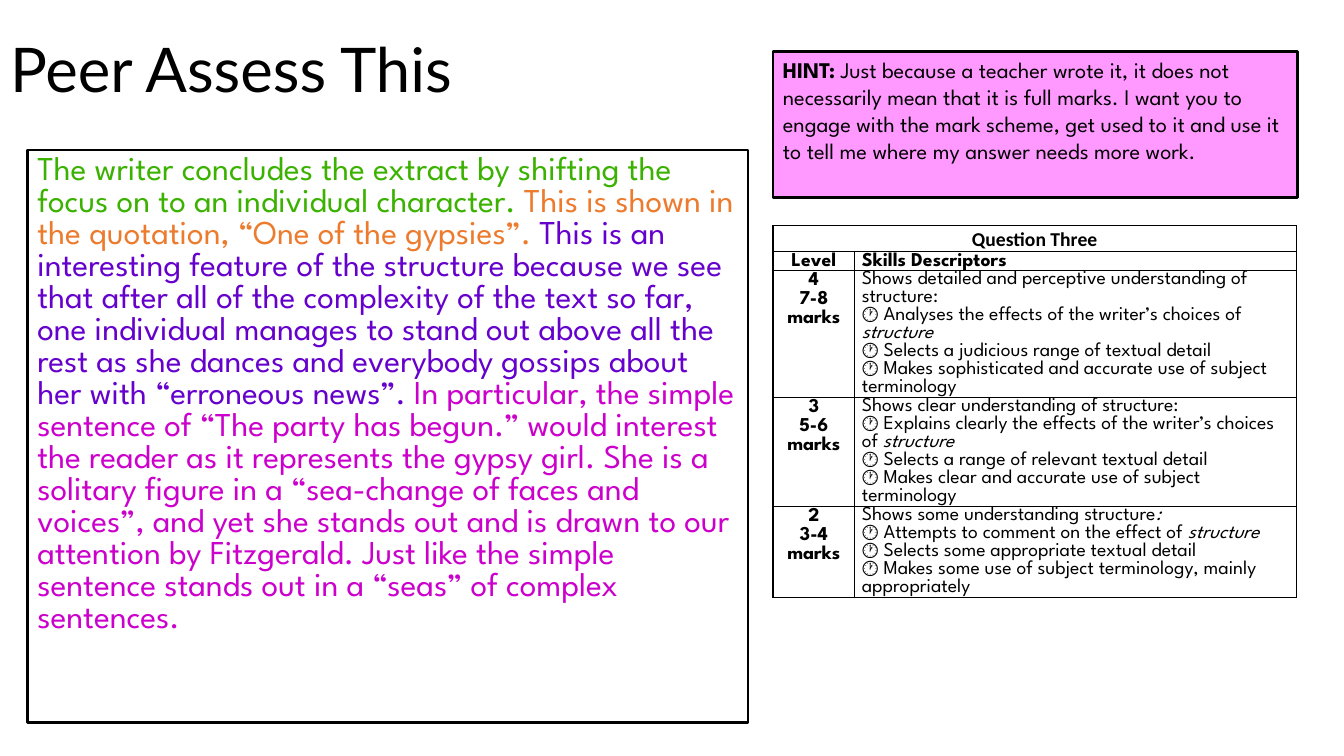
from lxml import etree
from pptx import Presentation
from pptx.dml.color import RGBColor
from pptx.enum.shapes import MSO_SHAPE
from pptx.enum.text import MSO_ANCHOR, MSO_AUTO_SIZE, PP_ALIGN
from pptx.oxml.ns import qn
from pptx.util import Cm, Pt

RECTANGLE = MSO_SHAPE.RECTANGLE
TOP, MIDDLE = MSO_ANCHOR.TOP, MSO_ANCHOR.MIDDLE
LEFT, CENTER = PP_ALIGN.LEFT, PP_ALIGN.CENTER
NO_AUTOFIT = MSO_AUTO_SIZE.NONE

BLACK = RGBColor(0x00, 0x00, 0x00)
WHITE = RGBColor(0xFF, 0xFF, 0xFF)
PINK = RGBColor(0xFF, 0x99, 0xFF)
GREEN = RGBColor(0x3B, 0xB2, 0x00)
ORANGE = RGBColor(0xEC, 0x7B, 0x2D)
PURPLE = RGBColor(0x66, 0x00, 0xCC)
MAGENTA = RGBColor(0xCC, 0x00, 0xCC)

BOLD = {"bold": True}
ITALIC = {"italic": True}
RIGHT_COLUMN = 19.48

ANSWER = [
    ("The writer concludes the extract by shifting the focus on to an individual character. ",
     {"color": GREEN}),
    ("This is shown in the quotation, “One of the gypsies”. ", {"color": ORANGE}),
    ("This is an interesting feature of the structure because we see that after all of the "
     "complexity of the text so far, one individual manages to stand out above all the rest as "
     "she dances and everybody gossips about her with “erroneous news”. ", {"color": PURPLE}),
    ("In particular, the simple sentence of “The party has begun.” would interest the reader as "
     "it represents the gypsy girl. She is a solitary figure in a “sea-change of faces and "
     "voices”, and yet she stands out and is drawn to our attention by Fitzgerald. Just like the "
     "simple sentence stands out in a “seas” of complex sentences.", {"color": MAGENTA}),
]

HINT = [
    ("HINT:", BOLD),
    (" Just because a teacher wrote it, it does not necessarily mean that it is full marks. "
     "I want you to engage with the mark scheme, get used to it and use it to tell me where my "
     "answer needs more work.", {}),
]

LEVELS = [
    ("4", "7-8 marks", [
        [("Shows detailed and perceptive understanding of structure:", {})],
        [("🕐 Analyses the effects of the writer’s choices of ", {}), ("structure", ITALIC)],
        [("🕐 Selects a judicious range of textual detail", {})],
        [("🕐 Makes sophisticated and accurate use of subject terminology", {})],
    ]),
    ("3", "5-6 marks", [
        [("Shows clear understanding of structure:", {})],
        [("🕐 Explains clearly the effects of the writer’s choices of ", {}),
         ("structure", ITALIC)],
        [("🕐 Selects a range of relevant textual detail", {})],
        [("🕐 Makes clear and accurate use of subject terminology", {})],
    ]),
    ("2", "3-4 marks", [
        [("Shows some understanding structure", {}), (":", ITALIC)],
        [("🕐 Attempts to comment on the effect of ", {}), ("structure", ITALIC)],
        [("🕐 Selects some appropriate textual detail", {})],
        [("🕐 Makes some use of subject terminology, mainly appropriately", {})],
    ]),
]


class SlideBuilder:
    body_font = "League Spartan"

    def __init__(self, deck):
        self.page = deck.slides.add_slide(deck.slide_layouts[5])

    def fill_text(self, frame, paragraphs, size, spacing, align=LEFT, font=body_font):
        for index, spans in enumerate(paragraphs):
            para = frame.add_paragraph() if index else frame.paragraphs[0]
            layout = {"alignment": align, "line_spacing": spacing,
                      "space_before": Pt(0), "space_after": Pt(0)}
            for name, value in layout.items():
                setattr(para, name, value)
            for text, changes in spans:
                span = para.add_run()
                span.text = text
                style = {"name": font, "size": Pt(size), "bold": False, "italic": False,
                         "color": BLACK, **changes}
                span.font.color.rgb = style.pop("color")
                for name, value in style.items():
                    setattr(span.font, name, value)

    def title(self, text, left, top, width, height):
        box = self.page.shapes.title
        place = {"left": left, "top": top, "width": width, "height": height}
        for name, value in place.items():
            setattr(box, name, Cm(value))
        frame = box.text_frame
        frame.auto_size = NO_AUTOFIT
        frame.word_wrap = True
        frame.vertical_anchor = MIDDLE
        self.fill_text(frame, [[(text, {})]], 44, 0.9, font="Lato")

    def panel(self, spans, place, fill, size, spacing):
        box = self.page.shapes.add_shape(RECTANGLE, *map(Cm, place))
        box.shadow.inherit = False
        box.fill.solid()
        box.fill.fore_color.rgb = fill
        box.line.color.rgb = BLACK
        box.line.width = Pt(2)
        box.text_frame.word_wrap = True
        box.text_frame.vertical_anchor = TOP
        self.fill_text(box.text_frame, [spans], size, spacing)

    def border(self, cell):
        properties = cell._tc.get_or_add_tcPr()
        for index, side in enumerate(("lnL", "lnR", "lnT", "lnB")):
            line = etree.Element(qn(f"a:{side}"), w=str(Pt(1)))
            fill = etree.SubElement(line, qn("a:solidFill"))
            etree.SubElement(fill, qn("a:srgbClr"), val=str(BLACK))
            properties.insert(index, line)

    def grid(self, left, top, widths, heights):
        frame = self.page.shapes.add_table(
            len(heights), len(widths), Cm(left), Cm(top), Cm(sum(widths)), Cm(sum(heights)))
        table = frame.table
        table.first_row = table.horz_banding = False
        for column, width in zip(table.columns, widths):
            column.width = Cm(width)
        for row, height in zip(table.rows, heights):
            row.height = Cm(height)
        margins = {"margin_left": Cm(0.18), "margin_right": Cm(0.18),
                   "margin_top": 0, "margin_bottom": 0}
        for cell in table.iter_cells():
            for name, value in margins.items():
                setattr(cell, name, value)
            cell.fill.background()
            self.border(cell)
        return table

    def mark_scheme(self, left, top, widths, heights):
        table = self.grid(left, top, widths, heights)
        heading = table.cell(0, 0)
        heading.merge(table.cell(0, 1))
        self.fill_text(heading.text_frame, [[("Question Three", BOLD)]], 14, 1.07, CENTER,
                       "Calibri")
        wide, tight = Pt(13.7), Pt(12.85)
        rows = [(["Level"], [[("Skills Descriptors", BOLD)]], wide)]
        rows += [([level, marks], skills, tight) for level, marks, skills in LEVELS]
        for index, (labels, skills, spacing) in enumerate(rows, 1):
            label_paragraphs = [[(label, BOLD)] for label in labels]
            self.fill_text(table.cell(index, 0).text_frame, label_paragraphs, 14, wide, CENTER)
            self.fill_text(table.cell(index, 1).text_frame, skills, 14, spacing)


def main():
    deck = Presentation()
    deck.slide_width, deck.slide_height = Cm(33.87), Cm(19.05)
    builder = SlideBuilder(deck)
    builder.title("Peer Assess This", 0, 0, 29.21, 3.68)
    builder.panel(ANSWER, (0.69, 3.78, 18.16, 14.43), WHITE, 23.8, Pt(22.85))
    builder.mark_scheme(RIGHT_COLUMN, 5.69, (2.06, 11.13), (0.65, 0.48, 3.2, 2.74, 2.29))
    builder.panel(HINT, (RIGHT_COLUMN, 1.3, 13.21, 3.68), PINK, 16, Pt(19.1))
    deck.save("out.pptx")


if __name__ == "__main__":
    main()
